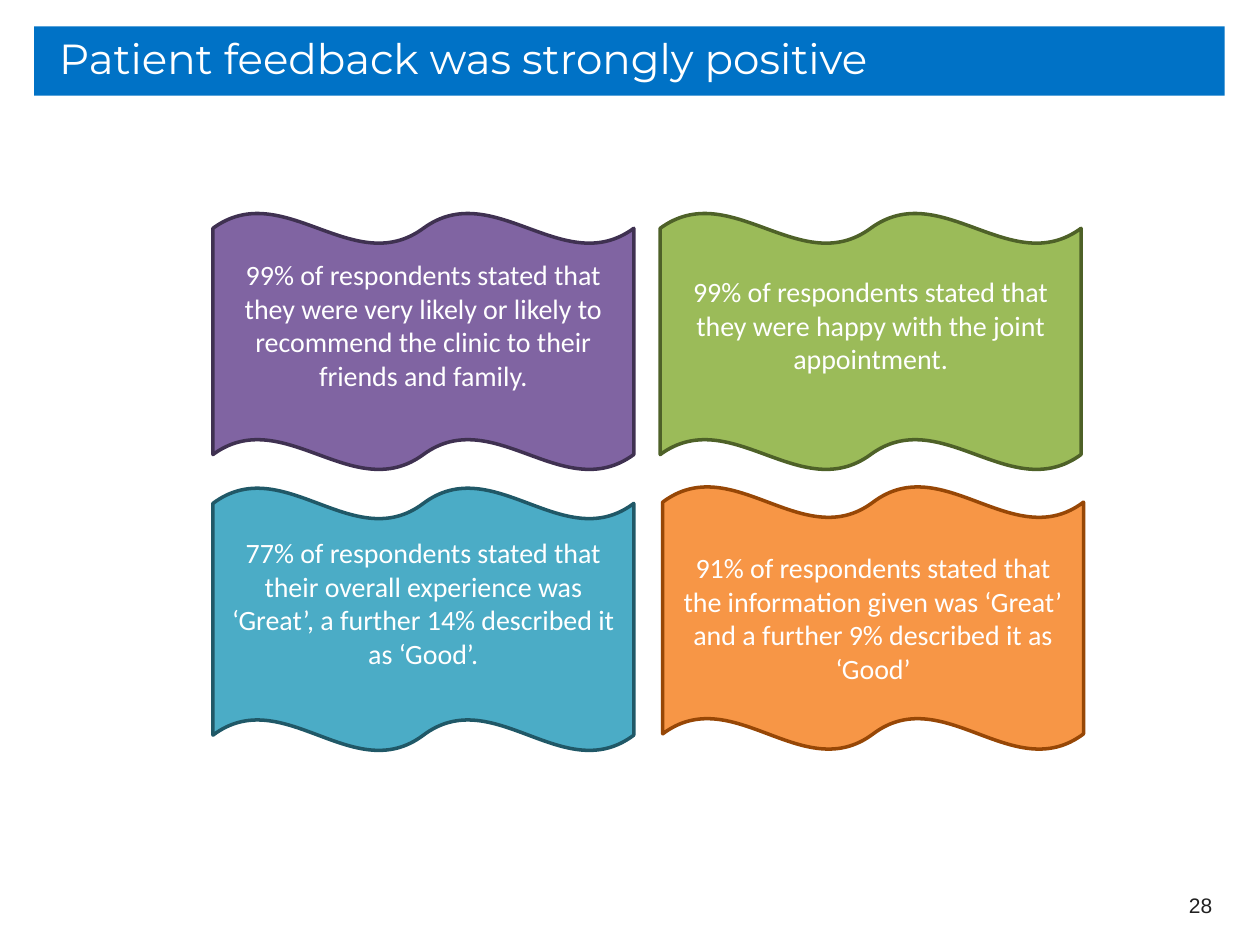
from pptx import Presentation
from pptx import util as u
from pptx.dml.color import RGBColor
from pptx.enum import shapes, text

THEME = {
    "banner": "0072C6", "white": "FFFFFF", "number": "202020",
    "purple": ("8064A2", "3F3151"), "green": ("9BBB59", "4E6128"),
    "teal": ("4BACC6", "205867"), "orange": ("F79646", "974706"),
    "title_size": 24, "body_size": 16, "number_size": 12,
}


def write(box, words, *, font, size, color, align, anchor, bottom=0.05):
    frame = box.text_frame
    frame.word_wrap = True
    frame.auto_size = text.MSO_AUTO_SIZE.NONE
    frame.vertical_anchor = anchor
    frame.margin_bottom = u.Inches(bottom)
    para = frame.paragraphs[0]
    para.alignment = align
    span = para.add_run()
    span.text = words
    span.font.name = font
    span.font.size = u.Pt(size)
    span.font.color.rgb = RGBColor.from_string(color)


deck = Presentation()
deck.slide_width, deck.slide_height = u.Inches(10), u.Inches(7.5)
page = deck.slides.add_slide(deck.slide_layouts[5])

# Title banner
title = page.shapes.title
title.left, title.top = u.Inches(0.27), u.Inches(0.21)
title.width, title.height = u.Inches(9.45), u.Inches(0.55)
title.fill.solid()
title.fill.fore_color.rgb = RGBColor.from_string(THEME["banner"])
write(title, "Patient feedback was strongly positive", font="Montserrat",
      size=THEME["title_size"], color=THEME["white"],
      align=text.PP_ALIGN.LEFT, anchor=text.MSO_ANCHOR.TOP)
title.text_frame.margin_left = u.Inches(0.2)

# Page number
number = page.shapes.add_textbox(u.Inches(7.39), u.Inches(6.98), u.Inches(2.33), u.Inches(0.4))
write(number, "28", font="Arial", size=THEME["number_size"], color=THEME["number"],
      align=text.PP_ALIGN.RIGHT, anchor=text.MSO_ANCHOR.MIDDLE)

# Feedback waves: left, top, height, bottom inset, colours, words
RAISED, CENTRED = 0.31, 0.05
feedback = [
    (1.69, 1.69, 2.04, RAISED, "purple",
     "99% of respondents stated that they were very likely or likely to "
     "recommend the clinic to their friends and family."),
    (5.24, 1.69, 2.04, RAISED, "green",
     "99% of respondents stated that they were happy with the joint appointment."),
    (1.69, 3.87, 2.09, RAISED, "teal",
     "77% of respondents stated that their overall experience was ‘Great’, "
     "a further 14% described it as ‘Good’."),
    (5.26, 3.86, 2.09, CENTRED, "orange",
     "91% of respondents stated that the information given was ‘Great’ "
     "and a further 9% described it as ‘Good’"),
]
for left, top, height, bottom, colors, words in feedback:
    fill, line = THEME[colors]
    wave = page.shapes.add_shape(shapes.MSO_SHAPE.DOUBLE_WAVE, u.Inches(left), u.Inches(top),
                                 u.Inches(3.34), u.Inches(height))
    wave.adjustments[0] = 0.06
    wave.shadow.inherit = False
    wave.fill.solid()
    wave.fill.fore_color.rgb = RGBColor.from_string(fill)
    wave.line.color.rgb = RGBColor.from_string(line)
    wave.line.width = u.Pt(2)
    write(wave, words, font="Calibri", size=THEME["body_size"], color=THEME["white"],
          align=text.PP_ALIGN.CENTER, anchor=text.MSO_ANCHOR.MIDDLE, bottom=bottom)

deck.save("out.pptx")
